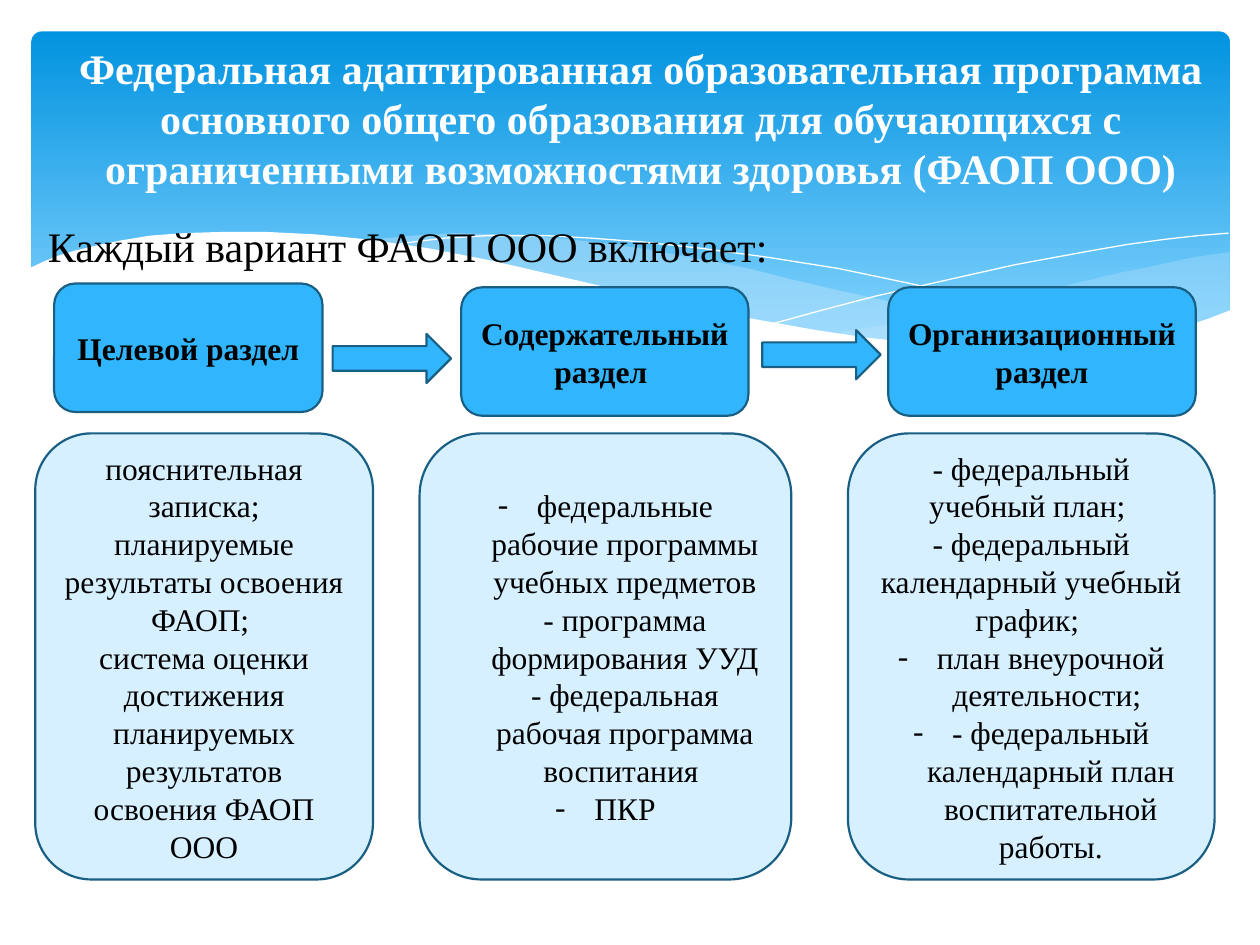
from lxml import etree
from pptx import Presentation
from pptx.dml.color import RGBColor
from pptx.enum.shapes import MSO_SHAPE
from pptx.enum.text import MSO_ANCHOR, PP_ALIGN
from pptx.oxml.ns import qn
from pptx.util import Inches, Pt

ROUNDED, ARROW = MSO_SHAPE.ROUNDED_RECTANGLE, MSO_SHAPE.RIGHT_ARROW
CENTER, LEFT = PP_ALIGN.CENTER, PP_ALIGN.LEFT
MIDDLE, TOP = MSO_ANCHOR.MIDDLE, MSO_ANCHOR.TOP

WHITE = RGBColor(0xFF, 0xFF, 0xFF)
BLACK = RGBColor(0, 0, 0)
SKY_TOP = RGBColor(0x02, 0x93, 0xE0)
SKY_BOTTOM = RGBColor(0x83, 0xD3, 0xFE)
MIST = RGBColor(0xC6, 0xE7, 0xFC)
ACCENT = RGBColor(0x31, 0xB6, 0xFD)
PALE = RGBColor(0xD6, 0xF0, 0xFF)
OUTLINE = RGBColor(0x19, 0x5F, 0x84)

BASE_FONT = {"name": "Times New Roman", "size": Pt(18), "bold": False}
HEADING_FONT = {**BASE_FONT, "bold": True}
LEAD_FONT = {**BASE_FONT, "size": Pt(24)}
TITLE_FONT = {**LEAD_FONT, "bold": True}

RIGHT_WAVE = [
    (9.76, 2), (9.48, 2.04), (9.21, 2.1), (8.91, 2.16), (8.61, 2.23), (8.05, 2.37),
    (7.53, 2.48), (7.06, 2.57), (6.61, 2.65), (6.91, 2.69), (7.19, 2.72), (7.45, 2.75),
    (7.69, 2.77), (8.03, 2.78), (8.35, 2.77), (8.63, 2.75), (8.89, 2.72), (9.13, 2.67),
    (9.35, 2.62), (9.49, 2.57), (9.63, 2.52), (9.76, 2.47),
]
MIDDLE_WAVE = [
    (8.93, 2.73), (8.66, 2.69), (8.07, 2.6), (7.41, 2.47), (6.68, 2.31), (6.29, 2.22),
    (5.98, 2.14), (5.69, 2.08), (5.41, 2.03), (5.14, 1.98), (4.89, 1.94), (4.42, 1.89),
    (3.99, 1.86), (3.61, 1.85), (3.28, 1.87), (2.86, 1.91), (3.23, 1.96), (3.62, 2.03),
    (4.04, 2.11), (4.49, 2.22), (5.3, 2.4), (5.84, 2.52), (6.34, 2.61), (6.8, 2.68),
    (7.22, 2.74), (7.61, 2.77), (7.96, 2.78), (8.28, 2.78), (8.57, 2.77), (8.76, 2.75),
]
FALLING_LINE = [
    (3.09, 1.95), (3.28, 1.92), (3.53, 1.89), (3.87, 1.87), (4.33, 1.87), (4.69, 1.89),
    (5.1, 1.92), (5.56, 1.97), (6.08, 2.04), (6.65, 2.13), (7.27, 2.26), (7.95, 2.41),
    (8.31, 2.51), (8.69, 2.61), (9.07, 2.72),
]
RISING_LINE = [
    (6.13, 2.57), (6.53, 2.46), (6.95, 2.35), (7.48, 2.23), (8.06, 2.1), (8.66, 1.99),
    (8.95, 1.94), (9.24, 1.9), (9.51, 1.87), (9.75, 1.85),
]
WHITE_WAVE = [
    (9.77, 2.46), (9.59, 2.53), (9.4, 2.59), (9.2, 2.65), (8.99, 2.69), (8.75, 2.73),
    (8.5, 2.75), (8.23, 2.77), (7.93, 2.76), (7.61, 2.75), (7.26, 2.72), (6.88, 2.68),
    (6.48, 2.62), (6.03, 2.54), (5.55, 2.45), (5.03, 2.33), (4.47, 2.2), (3.91, 2.07),
    (3.4, 1.97), (2.92, 1.9), (2.5, 1.86), (2.11, 1.84), (1.77, 1.84), (1.46, 1.85),
    (1.19, 1.87), (0.95, 1.91), (0.76, 1.95), (0.59, 1.99), (0.46, 2.03), (0.36, 2.07),
    (0.23, 2.13), (0.23, 3.29), (9.77, 3.29),
]

TITLE = (
    "Федеральная адаптированная образовательная программа основного общего "
    "образования для обучающихся с ограниченными возможностями здоровья (ФАОП ООО)"
)
LEAD = "Каждый вариант ФАОП ООО включает:"
HEADINGS = [
    ("Целевой раздел", 0.43, 2.25, 2.13),
    ("Содержательный раздел ", 3.66, 2.28, 2.28),
    ("Организационный раздел", 7.05, 2.28, 2.44),
]
DETAILS = [
    (0.28, 2.68, [
        ("пояснительная записка; планируемые результаты освоения ФАОП; ", False),
        ("система оценки достижения планируемых результатов освоения ФАОП ООО", False),
    ]),
    (3.33, 2.95, [
        ("федеральные рабочие программы учебных предметов - программа формирования УУД "
         "- федеральная рабочая программа воспитания ", True),
        ("ПКР", True),
    ]),
    (6.73, 2.91, [
        ("- федеральный учебный план; ", False),
        ("- федеральный календарный учебный график; ", False),
        ("план внеурочной деятельности; ", True),
        ("- федеральный календарный план воспитательной работы.", True),
    ]),
]
ARROWS = [(2.64, 2.65), (6.05, 2.62)]


def set_bullet(paragraph, dashed):
    """Give the paragraph a hanging dash, or no bullet and no indent."""
    props = paragraph._p.get_or_add_pPr()
    indent = Inches(0.31) if dashed else 0
    props.set("marL", str(indent))
    props.set("indent", str(-indent))
    if dashed:
        etree.SubElement(props, qn("a:buFont")).set("typeface", BASE_FONT["name"])
        etree.SubElement(props, qn("a:buChar")).set("char", "-")
    else:
        etree.SubElement(props, qn("a:buNone"))


def write_text(shape, paragraphs, font, color, align=CENTER, anchor=MIDDLE):
    """Fill a shape with (text, dashed) paragraphs."""
    frame = shape.text_frame
    frame.word_wrap = True
    frame.vertical_anchor = anchor
    for index, (text, dashed) in enumerate(paragraphs):
        paragraph = frame.add_paragraph() if index else frame.paragraphs[0]
        paragraph.alignment = align
        set_bullet(paragraph, dashed)
        run = paragraph.add_run()
        run.text = text
        for attribute, value in font.items():
            setattr(run.font, attribute, value)
        run.font.color.rgb = color


def place_placeholder(placeholder, box, text, font, color, align, anchor):
    """Move a placeholder in front of the backdrop and write its text."""
    placeholder.element.getparent().append(placeholder.element)
    for side, value in zip(("left", "top", "width", "height"), box):
        setattr(placeholder, side, Inches(value))
    write_text(placeholder, [(text, False)], font, color, align, anchor)


def add_block(slide, preset, box, fill):
    """Add an outlined preset shape with a solid fill."""
    block = slide.shapes.add_shape(preset, *map(Inches, box))
    block.shadow.inherit = False
    block.fill.solid()
    block.fill.fore_color.rgb = fill
    block.line.color.rgb = OUTLINE
    block.line.width = Pt(1.25)
    return block


def add_curve(slide, points, closed):
    """Add an outline through points given in inches."""
    start, *rest = [(Inches(x), Inches(y)) for x, y in points]
    builder = slide.shapes.build_freeform(*start)
    builder.add_line_segments(rest, close=closed)
    curve = builder.convert_to_shape()
    curve.shadow.inherit = False
    return curve


def add_wave(slide, points, color, opacity=100):
    """Add a filled wave of the given opacity in percent."""
    wave = add_curve(slide, points, True)
    wave.line.fill.background()
    wave.fill.solid()
    wave.fill.fore_color.rgb = color
    if opacity < 100:
        rgb = wave.element.spPr.find(qn("a:solidFill")).find(qn("a:srgbClr"))
        etree.SubElement(rgb, qn("a:alpha")).set("val", str(opacity * 1000))


def add_hairline(slide, points):
    """Add a thin white open curve."""
    hairline = add_curve(slide, points, False)
    hairline.fill.background()
    hairline.line.color.rgb = WHITE
    hairline.line.width = Pt(0)


def add_backdrop(slide):
    """Add the sky panel with its waves."""
    sky = slide.shapes.add_shape(ROUNDED, *map(Inches, (0.25, 0.25, 9.51, 2.7)))
    sky.adjustments[0] = 0.03
    sky.shadow.inherit = False
    sky.line.fill.background()
    sky.fill.gradient()
    sky.fill.gradient_angle = 270
    for stop, color, position in zip(sky.fill.gradient_stops, (SKY_TOP, SKY_BOTTOM), (0, 0.9)):
        stop.color.rgb = color
        stop.position = position
    add_wave(slide, RIGHT_WAVE, MIST, 29)
    add_wave(slide, MIDDLE_WAVE, MIST, 40)
    add_hairline(slide, FALLING_LINE)
    add_hairline(slide, RISING_LINE)
    add_wave(slide, WHITE_WAVE, WHITE)


def main():
    """Build the slide and save it."""
    deck = Presentation()
    deck.slide_width, deck.slide_height = Inches(10), Inches(7.5)
    slide = deck.slides.add_slide(deck.slide_layouts[1])
    title, lead = slide.placeholders
    add_backdrop(slide)
    place_placeholder(lead, (0.28, 1.7, 9.61, 5.51), LEAD, LEAD_FONT, BLACK, LEFT, TOP)
    place_placeholder(title, (0.28, 0.21, 9.61, 1.45), TITLE, TITLE_FONT, WHITE, CENTER, MIDDLE)
    for text, left, top, width in HEADINGS:
        heading = add_block(slide, ROUNDED, (left, top, width, 1.02), ACCENT)
        write_text(heading, [(text, False)], HEADING_FONT, BLACK)
    for left, width, paragraphs in DETAILS:
        details = add_block(slide, ROUNDED, (left, 3.44, width, 3.54), PALE)
        write_text(details, paragraphs, BASE_FONT, BLACK)
    for left, top in ARROWS:
        add_block(slide, ARROW, (left, top, 0.94, 0.39), ACCENT)
    deck.save("out.pptx")


if __name__ == "__main__":
    main()
